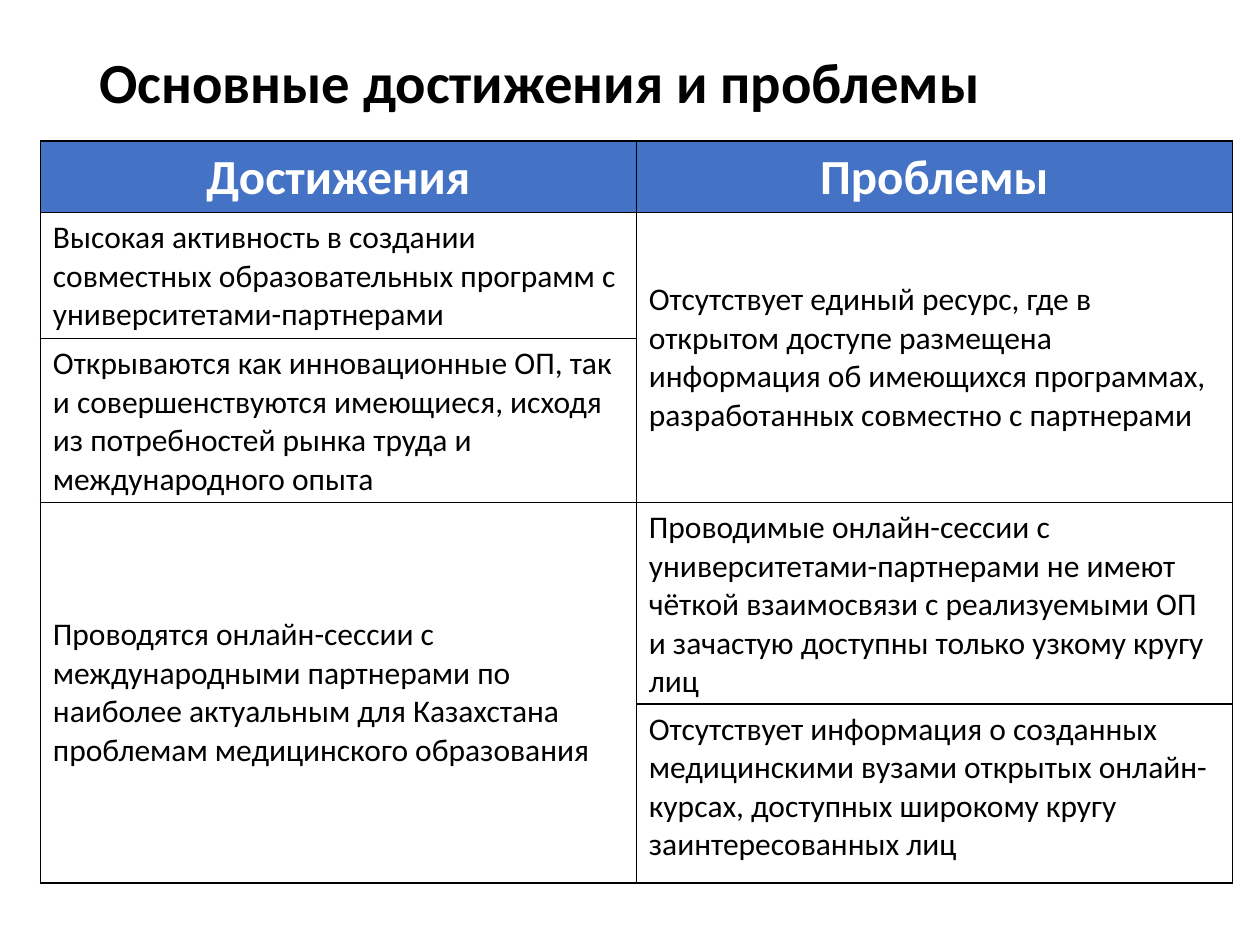
from lxml import etree
from pptx import Presentation
from pptx.dml.color import RGBColor
from pptx.enum.text import MSO_ANCHOR, PP_ALIGN
from pptx.oxml import parse_xml
from pptx.util import Inches, Pt

MIDDLE, TOP = MSO_ANCHOR.MIDDLE, MSO_ANCHOR.TOP
LEFT, CENTER = PP_ALIGN.LEFT, PP_ALIGN.CENTER
FONT, BLACK, WHITE, BLUE = "Calibri", "000000", "FFFFFF", "4472C4"
NS = "http://schemas.openxmlformats.org/drawingml/2006/main"

TITLE = "Основные достижения и проблемы"
HEADS = ["Достижения", "Проблемы"]
ROWS = [0.49, 0.86, 1.12, 1.37, 1.42]
# Body cells: row, column, rows spanned, text
BODY = [
    (1, 0, 1, "Высокая активность в создании совместных образовательных "
              "программ с университетами-партнерами"),
    (1, 1, 2, "Отсутствует единый ресурс, где в открытом доступе размещена "
              "информация об имеющихся программах, разработанных совместно "
              "с партнерами"),
    (2, 0, 1, "Открываются как инновационные ОП, так и совершенствуются "
              "имеющиеся, исходя из потребностей рынка труда и "
              "международного опыта"),
    (3, 0, 2, "Проводятся онлайн-сессии с международными партнерами по "
              "наиболее актуальным для Казахстана проблемам медицинского "
              "образования"),
    (3, 1, 1, "Проводимые онлайн-сессии с университетами-партнерами не имеют "
              "чёткой взаимосвязи с реализуемыми ОП и зачастую доступны "
              "только узкому кругу лиц"),
    (4, 1, 1, "Отсутствует информация о созданных медицинскими вузами "
              "открытых онлайн-курсах, доступных широкому кругу "
              "заинтересованных лиц"),
]


def color(code):
    return RGBColor.from_string(code)


def write(frame, text, size, code, bold=False, align=LEFT):
    para = frame.paragraphs[0]
    para.alignment = align
    run = para.add_run()
    run.text = text
    font = run.font
    font.name, font.size, font.bold = FONT, Pt(size), bold
    font.color.rgb = color(code)
    return para


def paint(cell, code):
    """Fill a cell and draw its four borders."""
    props = cell._tc.get_or_add_tcPr()
    for side in ("lnL", "lnR", "lnT", "lnB"):
        line = parse_xml(f'<a:{side} xmlns:a="{NS}" w="{Pt(1)}"/>')
        fill = etree.SubElement(line, f"{{{NS}}}solidFill")
        etree.SubElement(fill, f"{{{NS}}}srgbClr", val=BLACK)
        props.append(line)
    cell.fill.solid()
    cell.fill.fore_color.rgb = color(code)


def add_title(slide, x, y, w, h):
    box = slide.shapes.add_textbox(Inches(x), Inches(y), Inches(w), Inches(h))
    frame = box.text_frame
    frame.word_wrap = True
    frame.vertical_anchor = MIDDLE
    write(frame, TITLE, 32.4, BLACK, True).line_spacing = 0.9


def add_grid(slide, x, y, w, h):
    shape = slide.shapes.add_table(len(ROWS), len(HEADS), Inches(x), Inches(y),
                                   Inches(w), Inches(h))
    table = shape.table
    for col in table.columns:
        col.width = Inches(w / len(HEADS))
    for row, tall in zip(table.rows, ROWS):
        row.height = Inches(tall)
    shape.height = Inches(h)

    # Fills and borders
    for i, row in enumerate(table.rows):
        for cell in row.cells:
            paint(cell, WHITE if i else BLUE)

    # Header row
    for j, head in enumerate(HEADS):
        write(table.cell(0, j).text_frame, head, 28, WHITE, True, CENTER)

    # Body cells
    for i, j, span, text in BODY:
        cell = table.cell(i, j)
        if span > 1:
            cell.merge(table.cell(i + span - 1, j))
        cell.vertical_anchor = MIDDLE if span > 1 else TOP
        write(cell.text_frame, text, 18, BLACK)


def main():
    deck = Presentation()
    deck.slide_width, deck.slide_height = Inches(10), Inches(7.5)
    slide = deck.slides.add_slide(deck.slide_layouts[6])
    add_title(slide, 0.69, 0.4, 8.62, 0.55)
    add_grid(slide, 0.32, 1.12, 9.46, 5.89)
    deck.save("out.pptx")


if __name__ == "__main__":
    main()
